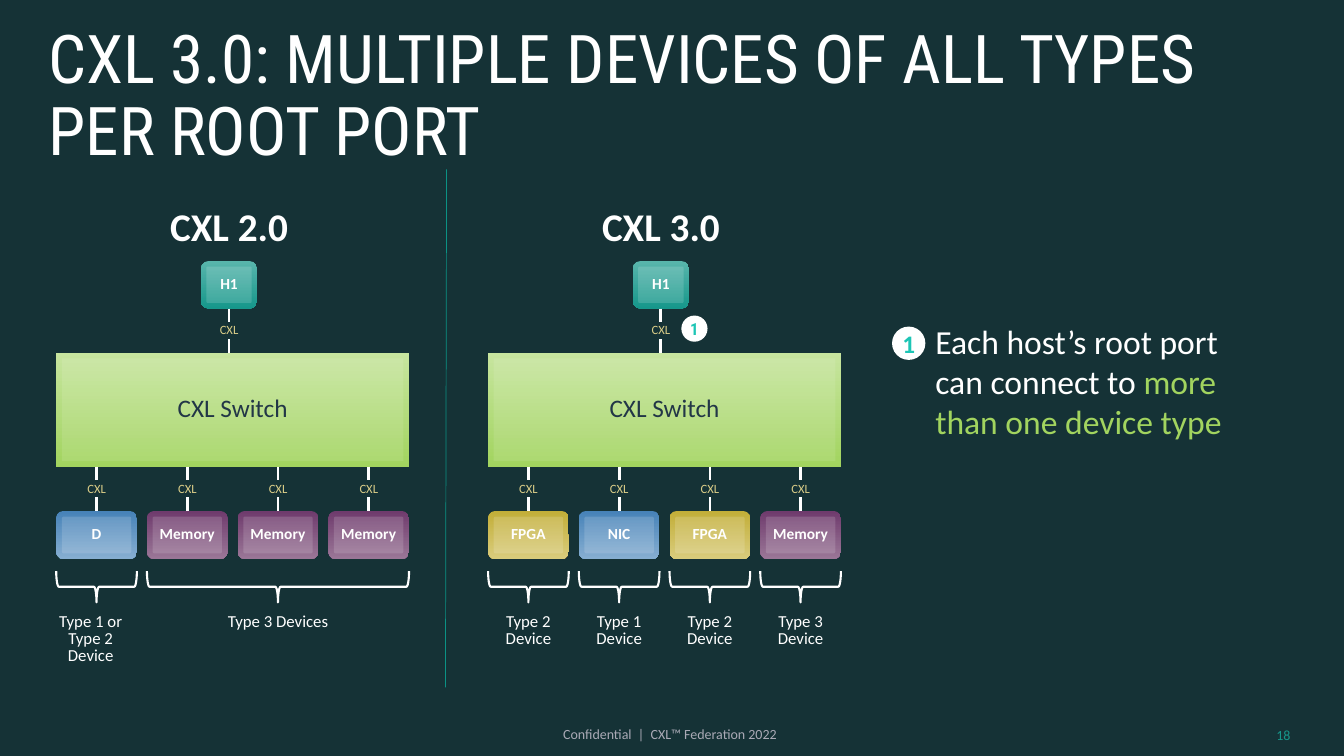
from dataclasses import dataclass
from typing import Optional

import lxml.etree
import pptx
import pptx.dml.color
import pptx.enum.shapes
import pptx.enum.text
import pptx.oxml.ns
import pptx.util

Pt = pptx.util.Pt
SHAPE = pptx.enum.shapes.MSO_SHAPE
ALIGN = pptx.enum.text.PP_ALIGN
ANCHOR = pptx.enum.text.MSO_ANCHOR

COLORS = {
    "background": "153236", "white": "FFFFFF", "link": "DACD88", "ink": "223647",
    "green": "A2D45F", "badge": "1DC5B5", "footer": "AAAAB6", "number": "16978B",
    "divider": "0B9285",
}
# Top and bottom colour of each kind of block
GRADIENTS = {
    "Host": ("59B6AC", "16978B"), "Switch": ("C7E59F", "A2D45F"),
    "D": ("4682B8", "86AED1"), "NIC": ("4682B8", "86AED1"),
    "FPGA": ("C2AE38", "D9CC7C"), "Memory": ("6F3B6D", "9A7697"),
}
DEVICE_WIDTH, DEVICE_PITCH = 57.6, 64.8
SWITCH_TOP, SWITCH_HEIGHT, SWITCH_WIDTH = 252, 81.4, 252
DEVICE_TOP, HOST_TOP, HOST_HEIGHT, HOST_WIDTH = 365, 186.4, 34, 40.4
HOST_CENTER = 123.4  # from the left edge of a panel
BRACE_DEPTH, BRACE_TOP, LABEL_TOP = 22.4, 407.9, 435


@dataclass(frozen=True)
class Box:
    left: float
    top: float
    width: float
    height: float

    def lengths(self) -> tuple:
        return Pt(self.left), Pt(self.top), Pt(self.width), Pt(self.height)

    def inset(self, margin: float) -> "Box":
        return Box(self.left + margin, self.top + margin,
                   self.width - 2 * margin, self.height - 2 * margin)


@dataclass(frozen=True)
class Style:
    size: float
    color: str = "white"
    bold: bool = False
    font: str = "Calibri"
    align: ALIGN = ALIGN.CENTER
    spacing: Optional[float] = 0.85


@dataclass(frozen=True)
class Bracket:
    first: int
    last: int
    lines: tuple
    label_width: float = DEVICE_WIDTH
    label_shift: float = 0


@dataclass(frozen=True)
class Panel:
    title: str
    left: float
    devices: tuple
    brackets: tuple


PANELS = (
    Panel("CXL 2.0", 40.2, ("D", "Memory", "Memory", "Memory"), (
        Bracket(0, 0, ("Type 1 or Type 2", "Device"), 73.4, -4.2),
        Bracket(1, 3, ("Type 3 Devices",), 118))),
    Panel("CXL 3.0", 348.7, ("FPGA", "NIC", "FPGA", "Memory"), tuple(
        Bracket(index, index, (f"Type {kind}", "Device"))
        for index, kind in enumerate((2, 1, 2, 3)))),
)
BLOCK_STYLE = Style(11, bold=True)


def rgb(name: str) -> pptx.dml.color.RGBColor:
    return pptx.dml.color.RGBColor.from_string(COLORS.get(name, name))


def format_paragraph(paragraph, style: Style) -> None:
    paragraph.alignment = style.align
    paragraph.line_spacing = style.spacing
    font = paragraph.font
    font.name, font.size, font.bold = style.font, Pt(style.size), style.bold
    font.color.rgb = rgb(style.color)


def write_lines(frame, lines: tuple, style: Style) -> None:
    for index, line in enumerate(lines):
        paragraph = frame.add_paragraph() if index else frame.paragraphs[0]
        paragraph.text = line
        format_paragraph(paragraph, style)


def add_text(slide, box: Box, lines: tuple, style: Style, anchor=ANCHOR.TOP):
    frame = slide.shapes.add_textbox(*box.lengths()).text_frame
    frame.word_wrap = True
    frame.vertical_anchor = anchor
    write_lines(frame, lines, style)
    return frame


def add_filled(slide, kind, box: Box, color: str, text: str, style: Style):
    shape = slide.shapes.add_shape(kind, *box.lengths())
    shape.shadow.inherit = False
    shape.fill.solid()
    shape.fill.fore_color.rgb = rgb(color)
    shape.line.fill.background()
    frame = shape.text_frame
    frame.margin_left = frame.margin_right = frame.margin_top = frame.margin_bottom = 0
    frame.word_wrap = False
    frame.vertical_anchor = ANCHOR.MIDDLE
    write_lines(frame, (text,), style)
    return shape


def add_block(slide, kind, box: Box, gradient: str, text: str, style: Style,
              sheen: int, corners: tuple = ()):
    """Draw a gradient block with a translucent, labelled inner face."""
    block = slide.shapes.add_shape(kind, *box.lengths())
    block.shadow.inherit = False
    block.line.fill.background()
    block.fill.gradient()
    block.fill.gradient_angle = 270
    for stop, color in zip(block.fill.gradient_stops, GRADIENTS[gradient]):
        stop.color.rgb = rgb(color)
    face = add_filled(slide, kind, box.inset(4), "white", text, style)
    color_element = face._element.spPr.find(".//" + pptx.oxml.ns.qn("a:srgbClr"))
    lxml.etree.SubElement(color_element, pptx.oxml.ns.qn("a:alpha"), val=str(sheen * 1000))
    for shape, corner in zip((block, face), corners):
        shape.adjustments[0] = corner
    return block


def add_line(slide, start: tuple, end: tuple, color: str, width: float):
    line = slide.shapes.add_connector(
        pptx.enum.shapes.MSO_CONNECTOR.STRAIGHT, *(Pt(value) for value in start + end))
    line.line.color.rgb = rgb(color)
    line.line.width = Pt(width)
    lxml.etree.SubElement(line._element.spPr, pptx.oxml.ns.qn("a:effectLst"))
    return line


def add_link(slide, center: float, top: float, bottom: float, above=None, below=None) -> None:
    """Draw a vertical link broken by its CXL label."""
    upper = add_line(slide, (center, top), (center, top + 9.5), "white", 2)
    lower = add_line(slide, (center, bottom - 9.8), (center, bottom), "white", 2)
    if above is not None:
        upper.begin_connect(above, 2)
    if below is not None:
        lower.end_connect(below, 0)
    add_text(slide, Box(center - 20.2, top + 8, 40.4, 16.6), ("CXL",), Style(9, "link"))


def add_bracket(slide, panel: Panel, bracket: Bracket) -> None:
    left = panel.left + bracket.first * DEVICE_PITCH
    span = (bracket.last - bracket.first) * DEVICE_PITCH + DEVICE_WIDTH
    center = left + span / 2
    # The brace stands upright before it is turned to point down
    box = Box(center - BRACE_DEPTH / 2, BRACE_TOP + (BRACE_DEPTH - span) / 2, BRACE_DEPTH, span)
    brace = slide.shapes.add_shape(SHAPE.LEFT_BRACE, *box.lengths())
    brace.rotation = 270
    brace.shadow.inherit = False
    brace.fill.background()
    brace.line.color.rgb = rgb("white")
    brace.line.width = Pt(1.5)
    label_left = center + bracket.label_shift - bracket.label_width / 2
    add_text(slide, Box(label_left, LABEL_TOP, bracket.label_width, 16 * len(bracket.lines)),
             bracket.lines, Style(12))


def add_panel(slide, panel: Panel) -> None:
    center = panel.left + HOST_CENTER
    add_text(slide, Box(center - 70.5, 146.2, 141, 36), (panel.title,), Style(28, bold=True))
    host = add_block(slide, SHAPE.ROUNDED_RECTANGLE,
                     Box(center - HOST_WIDTH / 2, HOST_TOP, HOST_WIDTH, HOST_HEIGHT),
                     "Host", "H1", BLOCK_STYLE, 15, (0.17, 0.04))
    add_block(slide, SHAPE.RECTANGLE, Box(panel.left, SWITCH_TOP, SWITCH_WIDTH, SWITCH_HEIGHT),
              "Switch", "CXL Switch", Style(18, "ink"), 10)
    add_link(slide, center, HOST_TOP + HOST_HEIGHT, SWITCH_TOP, above=host)
    for index, name in enumerate(panel.devices):
        left = panel.left + index * DEVICE_PITCH
        device = add_block(slide, SHAPE.ROUNDED_RECTANGLE,
                           Box(left, DEVICE_TOP, DEVICE_WIDTH, 34.3),
                           name, name, BLOCK_STYLE, 15, (0.15, 0.05))
        add_link(slide, left + DEVICE_WIDTH / 2, SWITCH_TOP + SWITCH_HEIGHT, DEVICE_TOP,
                 below=device)
    for bracket in panel.brackets:
        add_bracket(slide, panel, bracket)


def main() -> None:
    presentation = pptx.Presentation()
    presentation.slide_width, presentation.slide_height = Pt(960), Pt(540)
    slide = presentation.slides.add_slide(presentation.slide_layouts[5])
    slide.background.fill.solid()
    slide.background.fill.fore_color.rgb = rgb("background")

    # Title
    title = slide.shapes.title
    title.left, title.top, title.width, title.height = Box(27.4, 14.4, 915, 44.6).lengths()
    title.text_frame.auto_size = pptx.enum.text.MSO_AUTO_SIZE.NONE
    title.text_frame.vertical_anchor = ANCHOR.TOP
    write_lines(title.text_frame, ("CXL 3.0: MULTIPLE DEVICES OF ALL TYPES PER ROOT PORT",),
                Style(48, font="Roboto Condensed", align=ALIGN.LEFT, spacing=0.9))

    # Two topologies with the divider between them
    for panel in PANELS:
        add_panel(slide, panel)
    add_line(slide, (319, 121), (318.2, 491), "divider", 0.5)

    # Numbered remark and its marker in the diagram
    add_filled(slide, SHAPE.OVAL, Box(486.7, 225.4, 18.7, 18.7), "white", "1",
               Style(12, "badge", True, "Roboto Condensed", spacing=None))
    add_filled(slide, SHAPE.OVAL, Box(637.2, 233.3, 23.8, 23.8), "white", "1",
               Style(18, "badge", True, spacing=None))
    remark = add_text(slide, Box(661, 225.4, 255, 94.5),
                      ("Each host’s root port can connect to ",),
                      Style(24, align=ALIGN.LEFT, spacing=None))
    highlight = remark.paragraphs[0].add_run()
    highlight.text = "more than one device type"
    highlight.font.color.rgb = rgb("green")

    # Footer and slide number
    add_text(slide, Box(206, 515, 545, 18.7), ("Confidential  |  CXL™ Federation 2022",),
             Style(10, "footer", spacing=None), ANCHOR.MIDDLE)
    add_text(slide, Box(880.6, 510.5, 48.2, 28.8), ("18",),
             Style(10, "number", align=ALIGN.RIGHT, spacing=None), ANCHOR.MIDDLE)
    presentation.save("out.pptx")


if __name__ == "__main__":
    main()
